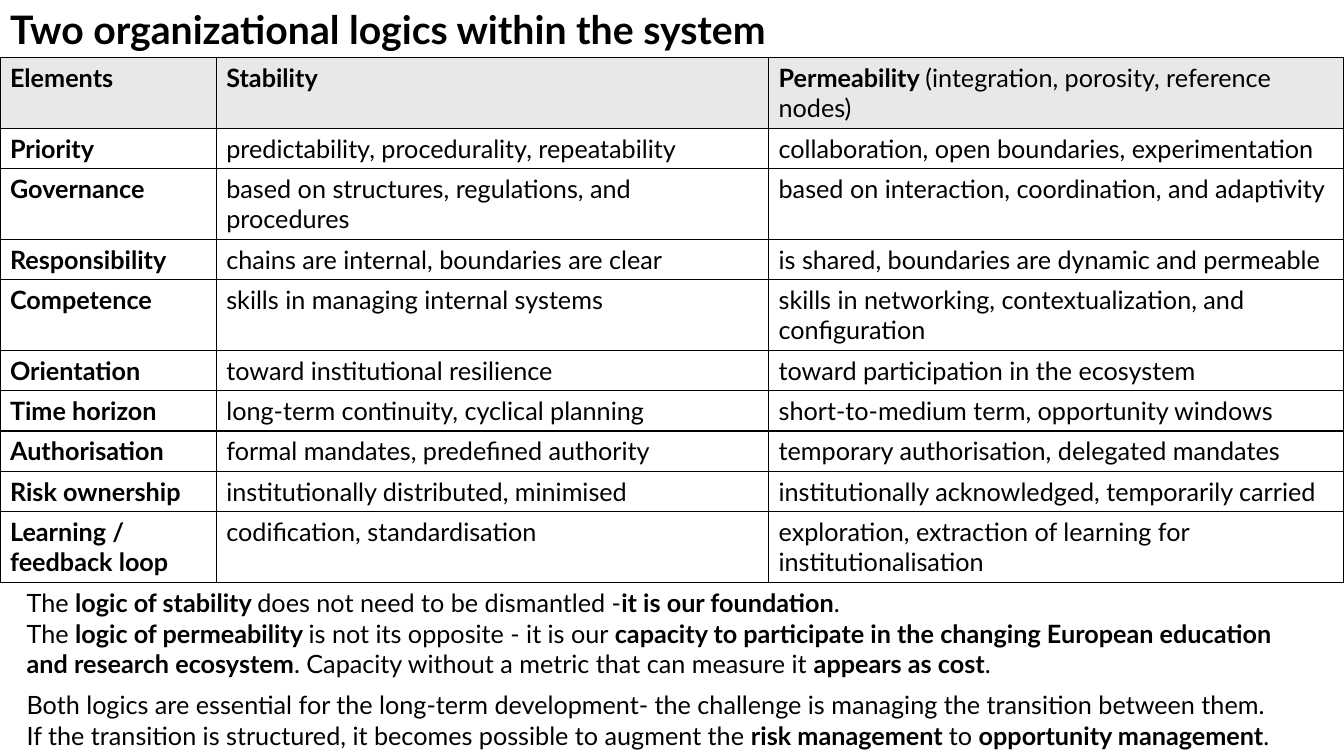
from lxml import etree
from pptx import Presentation
from pptx.dml.color import RGBColor
from pptx.enum.text import MSO_ANCHOR, PP_ALIGN
from pptx.oxml.ns import qn
from pptx.util import Pt

PX = 9525
TOP, MIDDLE, LEFT = MSO_ANCHOR.TOP, MSO_ANCHOR.MIDDLE, PP_ALIGN.LEFT
BLACK, HEADER_GREY = "000000", "E8E8E8"


def color(hex_code):
    return RGBColor.from_string(hex_code)


def write(frame, text, size=18, anchor=None):
    """Fill a text frame; ** switches bold and a newline breaks the line."""
    frame.word_wrap = True
    if anchor is not None:
        frame.vertical_anchor = anchor
    paragraph = frame.paragraphs[0]
    paragraph.alignment = LEFT
    for index, piece in enumerate(text.split("**")):
        for line_number, line in enumerate(piece.split("\n")):
            if line_number:
                paragraph.add_line_break()
            if line:
                run = paragraph.add_run()
                run.text = line
                run.font.name = "Lato"
                run.font.size = Pt(size)
                run.font.bold = index % 2 == 1
                run.font.color.rgb = color(BLACK)


deck = Presentation()
deck.slide_width, deck.slide_height = 1280 * PX, 720 * PX
slide = deck.slides.add_slide(deck.slide_layouts[5])

# Comparison table
rows = [
    ("Elements", "**Stability**",
     "**Permeability **(integration, porosity, reference nodes)"),
    ("Priority", "predictability, procedurality, repeatability",
     "collaboration, open boundaries, experimentation"),
    ("Governance", "based on structures, regulations, and procedures",
     "based on interaction, coordination, and adaptivity"),
    ("Responsibility", "chains are internal, boundaries are clear",
     "is shared, boundaries are dynamic and permeable"),
    ("Competence", "skills in managing internal systems",
     "skills in networking, contextualization, and configuration"),
    ("Orientation", "toward institutional resilience",
     "toward participation in the ecosystem"),
    ("Time horizon", "long-term continuity, cyclical planning",
     "short-to-medium term, opportunity windows"),
    ("Authorisation", "formal mandates, predefined authority",
     "temporary authorisation, delegated mandates"),
    ("Risk ownership", "institutionally distributed, minimised",
     "institutionally acknowledged, temporarily carried"),
    ("Learning / feedback loop", "codification, standardisation",
     "exploration, extraction of learning for institutionalisation"),
]
two_line_rows = {0, 2, 4, 9}
row_heights = [67 if r in two_line_rows else 38 for r in range(len(rows))]
logics = slide.shapes.add_table(
    len(rows), 3, 0, 55 * PX, 1280 * PX, sum(row_heights) * PX).table
logics.first_row = logics.horz_banding = False
for column, width in zip(logics.columns, (206, 526, 548)):
    column.width = width * PX

for r, (element, stability, permeability) in enumerate(rows):
    logics.rows[r].height = row_heights[r] * PX
    for c, text in enumerate((f"**{element}**", stability, permeability)):
        cell = logics.cell(r, c)
        write(cell.text_frame, text)
        cell.vertical_anchor = MIDDLE if (r, c) == (3, 2) else TOP
        properties = cell._tc.get_or_add_tcPr()
        for side in ("a:lnL", "a:lnR", "a:lnT", "a:lnB"):
            border = etree.SubElement(properties, qn(side), w=str(Pt(1)))
            fill = etree.SubElement(border, qn("a:solidFill"))
            etree.SubElement(fill, qn("a:srgbClr"), val=BLACK)
        if r == 0:
            cell.fill.solid()
            cell.fill.fore_color.rgb = color(HEADER_GREY)
        else:
            cell.fill.background()

# Title
title = slide.shapes.title
title.left, title.top, title.width, title.height = 0, 0, 828 * PX, 55 * PX
write(title.text_frame, "**Two organizational logics within the system**",
      size=28, anchor=TOP)

# Conclusions under the table
conclusions = [
    (652, 1205, 68,
     "Both logics are essential for the long-term development- the challenge "
     "is managing the transition between them.\nIf the transition is "
     "structured, it becomes possible to augment the **risk management **to "
     "**opportunity management**."),
    (555, 1222, 126,
     "The **logic of stability **does not need to be dismantled -**it is our "
     "foundation**.\nThe **logic of permeability **is not its opposite - it is "
     "our **capacity to participate in the changing European education and "
     "research ecosystem**. Capacity without a metric that can measure it "
     "**appears as cost**."),
]
for top, width, height, text in conclusions:
    conclusion = slide.shapes.add_textbox(16 * PX, top * PX, width * PX, height * PX)
    write(conclusion.text_frame, text, anchor=TOP)

deck.save("out.pptx")
